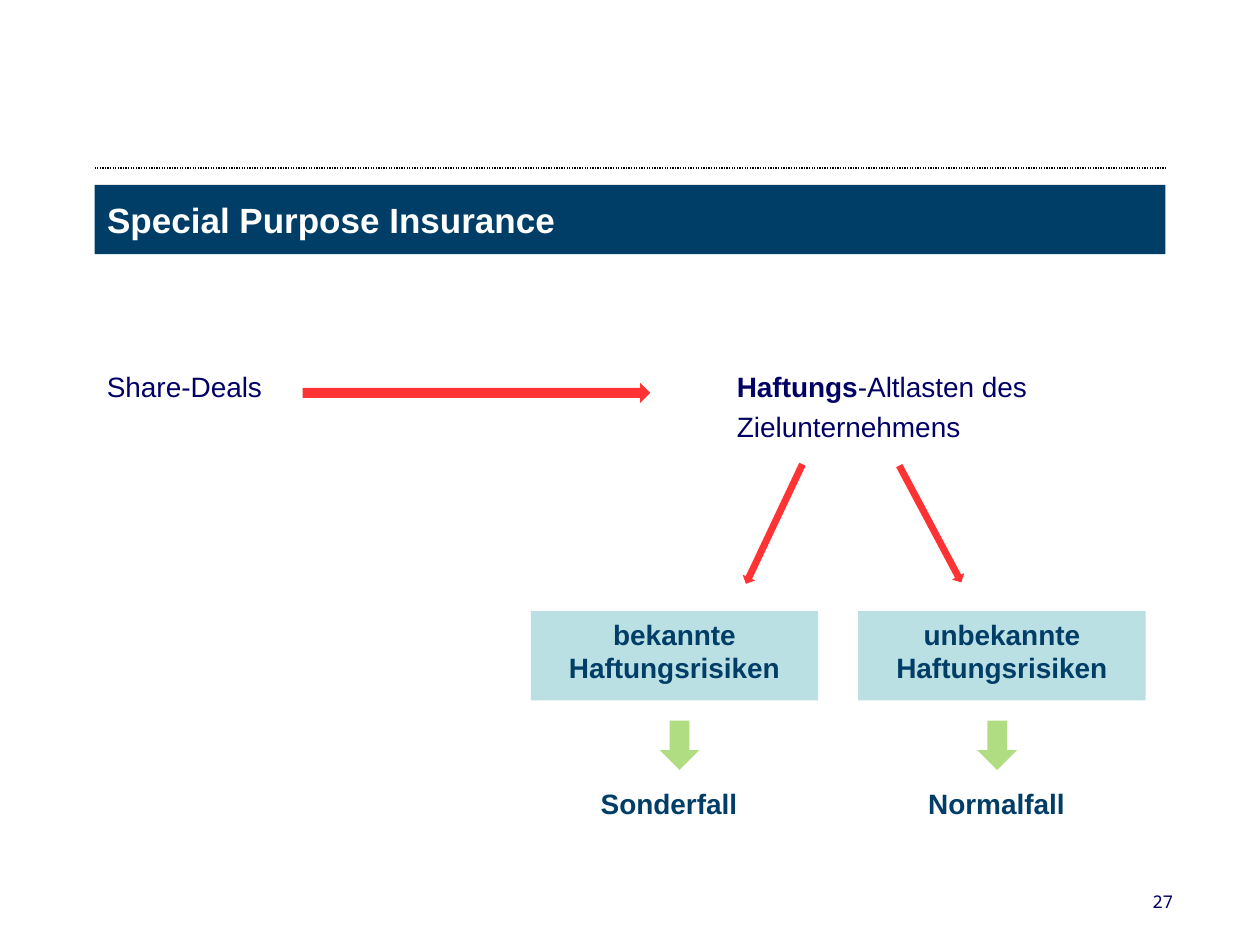
from dataclasses import dataclass

from lxml import etree
from pptx import Presentation
from pptx.dml.color import RGBColor
from pptx.enum.dml import MSO_LINE
from pptx.enum.shapes import MSO_CONNECTOR, MSO_SHAPE
from pptx.enum.text import MSO_ANCHOR, MSO_AUTO_SIZE, PP_ALIGN
from pptx.oxml.ns import qn
from pptx.util import Pt

RECT, RIGHT, DOWN = MSO_SHAPE.RECTANGLE, MSO_SHAPE.RIGHT_ARROW, MSO_SHAPE.DOWN_ARROW
TO_LEFT, TO_MID, TO_RIGHT = PP_ALIGN.LEFT, PP_ALIGN.CENTER, PP_ALIGN.RIGHT
TOP, MIDDLE = MSO_ANCHOR.TOP, MSO_ANCHOR.MIDDLE


@dataclass(frozen=True)
class Theme:
    navy: str = "003D67"
    ink: str = "000066"
    white: str = "FFFFFF"
    black: str = "000000"
    aqua: str = "BBE0E3"
    red: str = "FF0000"
    green: str = "92D050"
    font: str = "Arial"
    mono: str = "Noto Sans Mono"
    head: float = 20
    body: float = 16
    small: float = 10


THEME = Theme()
LEFT, WIDTH = 54, 612


def points(*sizes):
    return [Pt(size) for size in sizes]


def paint(shape, color, alpha=100):
    """Fill a shape without an outline; alpha is its opacity in percent."""
    shape.fill.solid()
    shape.fill.fore_color.rgb = RGBColor.from_string(color)
    shape.line.fill.background()
    if alpha < 100:
        tone = shape.fill._xPr.find(qn("a:solidFill"))[0]
        etree.SubElement(tone, qn("a:alpha"), val=str(alpha * 1000))


def write(shape, *lines, size=THEME.body, color=THEME.navy, font=THEME.font,
          bold=True, align=TO_LEFT, anchor=TOP, gap=0, tab=None):
    """Write lines of text; a line is a string or a list of (text, bold) runs."""
    frame = shape.text_frame
    frame.word_wrap = True
    frame.auto_size = MSO_AUTO_SIZE.NONE
    frame.vertical_anchor = anchor
    for i, line in enumerate(lines):
        para = frame.add_paragraph() if i else frame.paragraphs[0]
        para.alignment = align
        if i:
            para.space_before = Pt(gap)
        if tab:
            stops = etree.SubElement(para._p.get_or_add_pPr(), qn("a:tabLst"))
            etree.SubElement(stops, qn("a:tab"), pos=str(Pt(tab)), algn="l")
        for text, heavy in [(line, bold)] if isinstance(line, str) else line:
            run = para.add_run()
            run.text = text
            run.font.name, run.font.size, run.font.bold = font, Pt(size), heavy
            run.font.color.rgb = RGBColor.from_string(color)


def add_text(slide, box, *lines, **style):
    write(slide.shapes.add_textbox(*points(*box)), *lines, **style)


def add_block(slide, kind, box, color, alpha=100, turn=0):
    shape = slide.shapes.add_shape(kind, *points(*box))
    shape.shadow.inherit = False
    shape.rotation = turn
    paint(shape, color, alpha)
    return shape


def add_rule(slide, y):
    rule = slide.shapes.add_connector(
        MSO_CONNECTOR.STRAIGHT, *points(LEFT, y, LEFT + WIDTH, y))
    rule.line.color.rgb = RGBColor.from_string(THEME.black)
    rule.line.width = Pt(0.75)
    rule.line.dash_style = MSO_LINE.ROUND_DOT
    etree.SubElement(rule._element.spPr, qn("a:effectLst"))


def add_title(slide, text):
    title = slide.shapes.title
    title.left, title.top, title.width, title.height = points(LEFT, 105.6, WIDTH, 39.6)
    paint(title, THEME.navy)
    write(title, text, size=THEME.head, color=THEME.white, anchor=MIDDLE)


def add_case(slide, x, mid, risk, case):
    """Add a risk box, the arrow below it and the case it leads to."""
    box = add_block(slide, RECT, (x, 349.2, 164.2, 51), THEME.aqua)
    write(box, risk, align=TO_MID)
    add_block(slide, DOWN, (mid - 11.3, 411.8, 22.6, 28.2), THEME.green, 71)
    add_text(slide, (x - 6, 445.7, 170, 26.6), case, align=TO_MID)


def main():
    deck = Presentation()
    deck.slide_width, deck.slide_height = points(720, 540)
    slide = deck.slides.add_slide(deck.slide_layouts[5])

    add_rule(slide, 96)
    add_title(slide, "Special Purpose Insurance")
    add_text(slide, (LEFT, 207.4, WIDTH, 283.7),
             [("Share-Deals\t", False), ("Haftungs", True), ("-Altlasten des", False)],
             "\tZielunternehmens",
             color=THEME.ink, bold=False, gap=3.7, tab=360)

    add_block(slide, RIGHT, (173, 218.8, 198.6, 11.5), THEME.red, 80)
    for x, turn in ((404.6, 115.3), (493.8, 62)):
        add_block(slide, RIGHT, (x, 295.5, 75.6, 7.9), THEME.red, 80, turn)

    add_case(slide, 303.3, 388.3, "bekannte Haftungsrisiken", "Sonderfall")
    add_case(slide, 490.4, 569.8, "unbekannte Haftungsrisiken", "Normalfall")

    add_text(slide, (620.6, 505.4, 56.9, 36), "27", size=THEME.small,
             color=THEME.ink, font=THEME.mono, bold=False, align=TO_RIGHT)
    deck.save("out.pptx")


if __name__ == "__main__":
    main()
